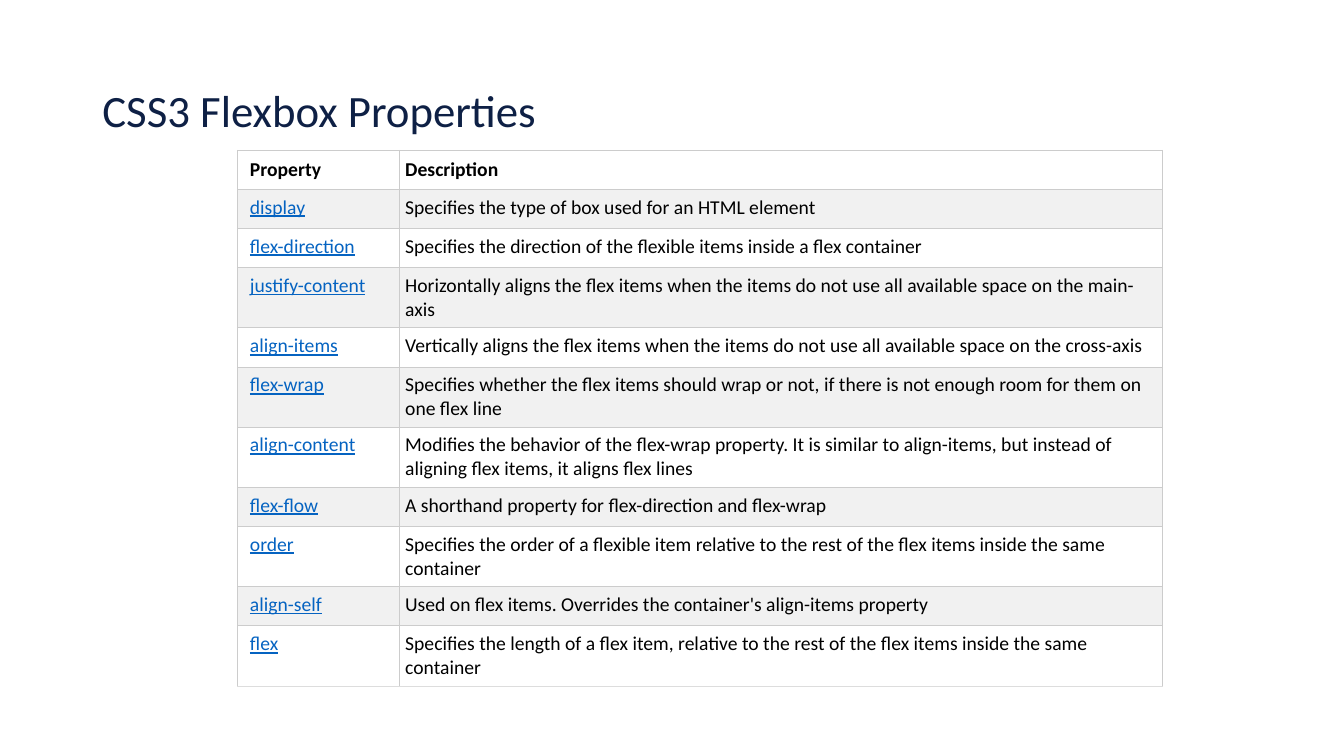
import pptx
import pptx.util
import pptx.dml.color
import pptx.enum.text
import pptx.oxml.ns
from lxml import etree

Pt = pptx.util.Pt
RGBColor = pptx.dml.color.RGBColor
Anchor = pptx.enum.text.MSO_ANCHOR

# Content: property, description, lines of text in the row
TITLE = "CSS3 Flexbox Properties"
ROWS = [
    ("Property", "Description", 1),
    ("display", "Specifies the type of box used for an HTML element", 1),
    ("flex-direction", "Specifies the direction of the flexible items inside a flex container", 1),
    ("justify-content", "Horizontally aligns the flex items when the items do not use all "
     "available space on the main-axis", 2),
    ("align-items", "Vertically aligns the flex items when the items do not use all "
     "available space on the cross-axis", 1),
    ("flex-wrap", "Specifies whether the flex items should wrap or not, if there is not "
     "enough room for them on one flex line", 2),
    ("align-content", "Modifies the behavior of the flex-wrap property. It is similar to "
     "align-items, but instead of aligning flex items, it aligns flex lines", 2),
    ("flex-flow", "A shorthand property for flex-direction and flex-wrap", 1),
    ("order", "Specifies the order of a flexible item relative to the rest of the flex "
     "items inside the same container", 2),
    ("align-self", "Used on flex items. Overrides the container's align-items property", 1),
    ("flex", "Specifies the length of a flex item, relative to the rest of the flex "
     "items inside the same container", 2),
]

# Look
FONT = "Calibri"
NAVY = RGBColor(0x0E, 0x20, 0x45)
BLACK = RGBColor(0, 0, 0)
BLUE = RGBColor(0x05, 0x63, 0xC1)
WHITE = RGBColor(0xFF, 0xFF, 0xFF)
BAND = RGBColor(0xF1, 0xF1, 0xF1)
GRID = RGBColor(0xCC, 0xCC, 0xCC)
BASE = RGBColor(0xDD, 0xDD, 0xDD)

# Sizes in points
LEFT, TOP = 169.92, 107.28
COLS = (115.2, 545.04)
HEIGHTS = {1: 28, 2: 43}
PAD, INDENT = 4.32, 8.64


def add_run(para, text, size, color):
    run = para.add_run()
    run.text = text
    run.font.name = FONT
    run.font.size = Pt(size)
    run.font.color.rgb = color
    return run


def add_edge(cell, side, color):
    qn = pptx.oxml.ns.qn
    props = cell._tc.get_or_add_tcPr()
    line = etree.SubElement(props, qn("a:ln" + side), w=str(Pt(0.75)))
    fill = etree.SubElement(line, qn("a:solidFill"))
    etree.SubElement(fill, qn("a:srgbClr"), val=str(color))


def main():
    deck = pptx.Presentation()
    deck.slide_width, deck.slide_height = Pt(960), Pt(540)
    slide = deck.slides.add_slide(deck.slide_layouts[6])

    # Title
    box = slide.shapes.add_textbox(Pt(66), Pt(28.8), Pt(828), Pt(104.4))
    frame = box.text_frame
    frame.word_wrap = True
    frame.vertical_anchor = Anchor.MIDDLE
    frame.paragraphs[0].line_spacing = 0.9
    add_run(frame.paragraphs[0], TITLE, 32, NAVY)

    # Table
    high = sum(HEIGHTS[lines] for _, _, lines in ROWS)
    table = slide.shapes.add_table(len(ROWS), len(COLS), Pt(LEFT), Pt(TOP),
                                   Pt(sum(COLS)), Pt(high)).table
    table.first_row = True
    table.horz_banding = False
    for col, wide in zip(table.columns, COLS):
        col.width = Pt(wide)

    # Cells
    last = len(ROWS) - 1
    for r, (*texts, lines) in enumerate(ROWS):
        table.rows[r].height = Pt(HEIGHTS[lines])
        for c, text in enumerate(texts):
            cell = table.cell(r, c)
            cell.margin_left = Pt(PAD if c else INDENT)
            cell.margin_right = cell.margin_top = cell.margin_bottom = Pt(PAD)
            cell.vertical_anchor = Anchor.TOP if r else Anchor.MIDDLE
            for side in "LRTB":
                add_edge(cell, side, BASE if r == last and side == "B" else GRID)
            cell.fill.solid()
            cell.fill.fore_color.rgb = BAND if r % 2 else WHITE
            link = r > 0 and c == 0
            run = add_run(cell.text_frame.paragraphs[0], text, 14, BLUE if link else BLACK)
            run.font.bold = r == 0
            run.font.underline = link

    deck.save("out.pptx")


if __name__ == "__main__":
    main()
